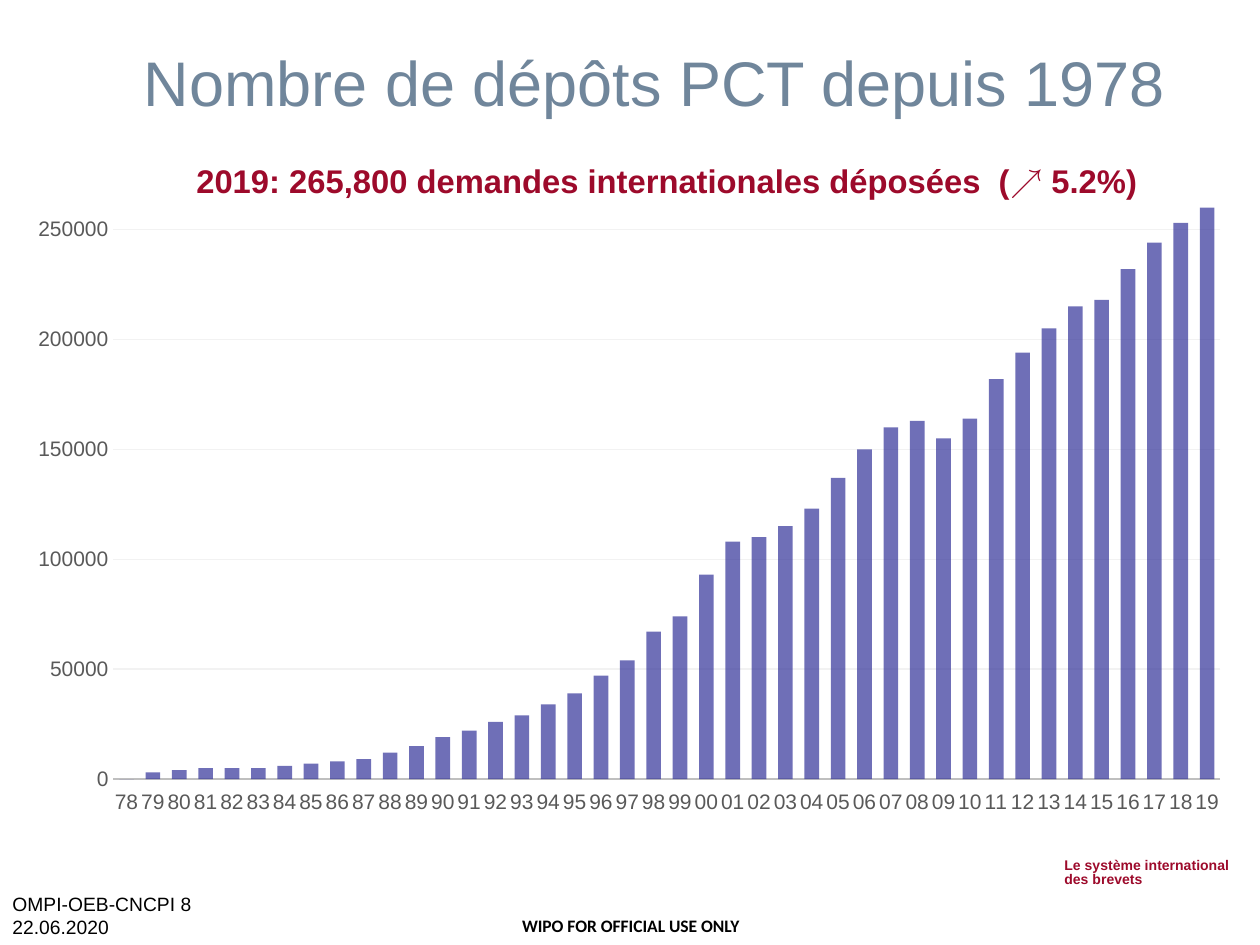
from lxml.etree import SubElement
from pptx import Presentation
from pptx.chart.data import CategoryChartData
from pptx.dml.color import RGBColor
from pptx.enum.chart import XL_CHART_TYPE, XL_TICK_LABEL_POSITION, XL_TICK_MARK
from pptx.enum.text import MSO_ANCHOR, PP_ALIGN
from pptx.oxml import parse_xml
from pptx.oxml.ns import nsdecls, qn
from pptx.util import Emu, Pt

SCALE = 914400 / 126
CRIMSON = "9D0A2B"
YEARS = [f"{year % 100:02d}" for year in range(1978, 2020)]
THOUSANDS_FILED = [
    0, 3, 4, 5, 5, 5, 6, 7, 8, 9, 12, 15, 19, 22, 26, 29, 34, 39, 47, 54, 67,
    74, 93, 108, 110, 115, 123, 137, 150, 160, 163, 155, 164, 182, 194, 205,
    215, 218, 232, 244, 253, 266,
]


def px(length):
    """Turn pixels into EMU."""
    return Emu(round(length * SCALE))


def color(value):
    """Turn a hex string into a colour."""
    return RGBColor.from_string(value)


def add_text(slide, box, lines, size, hex_color, bold=False, font="Arial",
             anchor=MSO_ANCHOR.TOP, align=PP_ALIGN.LEFT, wrap=True,
             spacing=None, inset=True):
    """Add a text box with one paragraph for each line."""
    frame = slide.shapes.add_textbox(*map(px, box)).text_frame
    frame.word_wrap = wrap
    frame.vertical_anchor = anchor
    if not inset:
        frame.margin_left = frame.margin_right = 0
        frame.margin_top = frame.margin_bottom = 0
    for index, line in enumerate(lines):
        paragraph = frame.add_paragraph() if index else frame.paragraphs[0]
        paragraph.alignment = align
        paragraph.line_spacing = spacing
        run = paragraph.add_run()
        run.text = line
        run.font.name = font
        run.font.size = Pt(size)
        run.font.bold = bold
        run.font.color.rgb = color(hex_color)


def add_heading(slide, left, top):
    """Add the title and the headline figure."""
    add_text(slide, (left, top, 1181, 110), ["Nombre de dépôts PCT depuis 1978"],
             36, "70869B", anchor=MSO_ANCHOR.MIDDLE, align=PP_ALIGN.CENTER)
    add_text(slide, (left + 120, top + 129, 983, 69),
             ["2019: 265,800 demandes internationales déposées  (↗ 5.2%)"],
             18.7, CRIMSON, bold=True)


def style_axis(axis):
    """Set the tick marks and label font of an axis."""
    axis.major_tick_mark = axis.minor_tick_mark = XL_TICK_MARK.NONE
    font = axis.tick_labels.font
    font.name = "Arial"
    font.size = Pt(12)
    font.color.rgb = color("595959")
    axis.tick_labels.number_format = "General"
    axis.tick_labels.number_format_is_linked = False


def set_plot_area(chart, x, y, width, height):
    """Place the inner plot area by fractions of the chart."""
    plot_area = chart.plots[0]._element.getparent()
    for old in plot_area.findall(qn("c:layout")):
        plot_area.remove(old)
    layout = parse_xml(f"<c:layout {nsdecls('c')}><c:manualLayout/></c:layout>")
    settings = {"layoutTarget": "inner", "xMode": "edge", "yMode": "edge",
                "x": x, "y": y, "w": width, "h": height}
    for name, value in settings.items():
        SubElement(layout[0], qn(f"c:{name}")).set("val", str(value))
    plot_area.insert(0, layout)


def add_filings_chart(slide, box):
    """Add the column chart of filings by year."""
    data = CategoryChartData()
    data.categories = YEARS
    data.add_series("Series 1", [value * 1000 for value in THOUSANDS_FILED])
    chart = slide.shapes.add_chart(
        XL_CHART_TYPE.COLUMN_CLUSTERED, *map(px, box), data).chart
    chart.has_legend = chart.has_title = False
    chart.font.name = "Arial"
    chart.font.size = Pt(10)
    chart.font.color.rgb = color("000000")
    set_plot_area(chart, 0.08, 0.02, 0.9, 0.9)

    plot = chart.plots[0]
    plot.vary_by_categories = False
    plot.gap_width = 80
    plot.overlap = 25
    fill = plot.series[0].format.fill
    fill.solid()
    fill.fore_color.rgb = color("333399")
    fill_color = plot.series[0]._element.find(".//" + qn("a:srgbClr"))
    SubElement(fill_color, qn("a:alpha")).set("val", "70000")

    years, filings = chart.category_axis, chart.value_axis
    for axis in (years, filings):
        style_axis(axis)
    years.tick_label_position = XL_TICK_LABEL_POSITION.LOW
    years.format.line.color.rgb = color("BFBFBF")
    years.format.line.width = Pt(1.25)
    filings.minimum_scale = 0
    filings.maximum_scale = 260000
    filings.major_unit = 50000
    filings.format.line.fill.background()
    grid = filings.major_gridlines.format.line
    grid.color.rgb = color("F2F2F2")
    grid.width = Pt(0.75)


def add_footer(slide, left, top):
    """Add the programme name, the meeting reference and the usage notice."""
    add_text(slide, (left + 1052, top, 194, 42),
             ["Le système international", "des brevets"], 8, CRIMSON,
             bold=True, wrap=False, spacing=0.85)
    add_text(slide, (left, top + 16, 353, 76), ["OMPI-OEB-CNCPI 8", "22.06.2020"],
             11, "000000", anchor=MSO_ANCHOR.BOTTOM)
    add_text(slide, (left + 522, top + 62, 223, 21), ["WIPO FOR OFFICIAL USE ONLY"],
             10, "000000", bold=True, font="Calibri", inset=False)


def main():
    """Build and save the presentation."""
    presentation = Presentation()
    presentation.slide_width, presentation.slide_height = px(1260), px(945)
    slide = presentation.slides.add_slide(presentation.slide_layouts[6])
    add_footer(slide, 0, 853)
    add_filings_chart(slide, (15, 195, 1230, 635))
    add_heading(slide, 64, 26)
    presentation.save("out.pptx")


if __name__ == "__main__":
    main()
